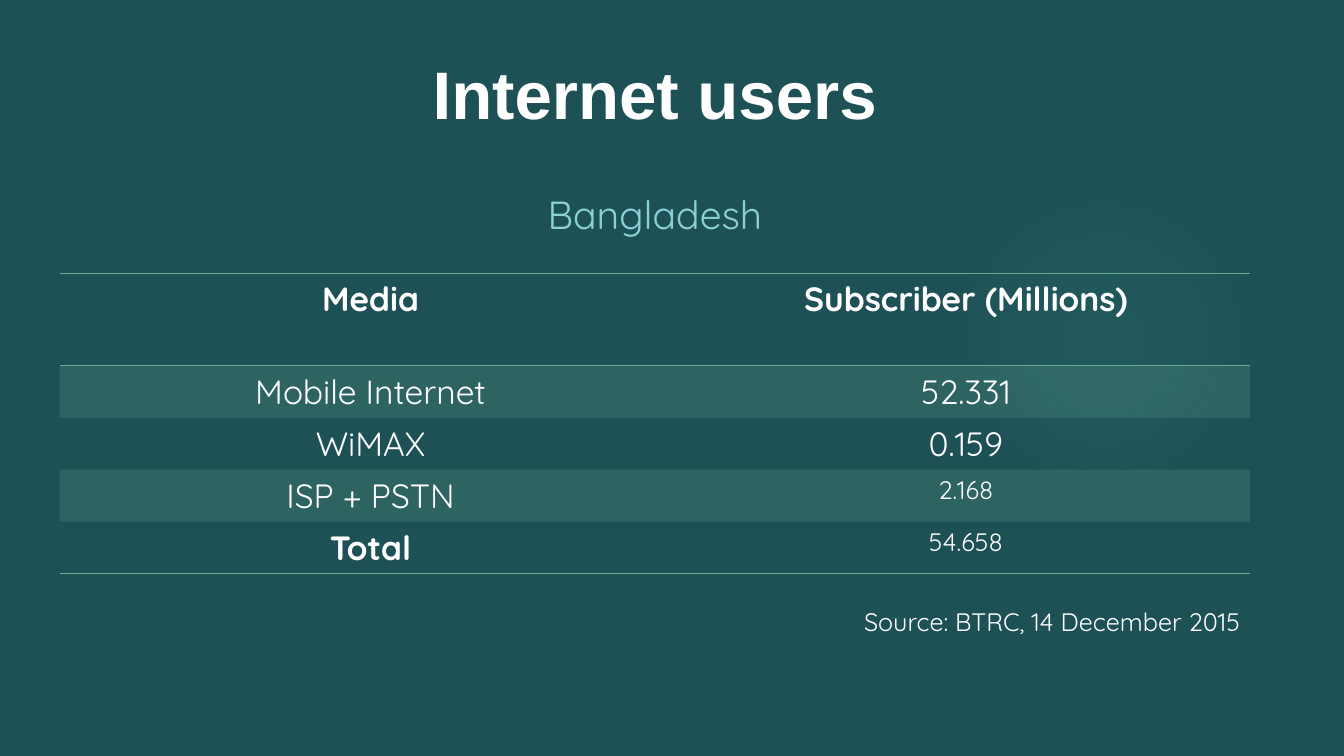
from lxml import etree
from pptx import Presentation
from pptx.dml.color import RGBColor
from pptx.enum.shapes import MSO_SHAPE
from pptx.enum.text import MSO_ANCHOR, PP_ALIGN
from pptx.oxml import parse_xml
from pptx.oxml.ns import nsdecls, qn
from pptx.util import Inches, Pt

CENTER, RIGHT = PP_ALIGN.CENTER, PP_ALIGN.RIGHT
TOP, MIDDLE = MSO_ANCHOR.TOP, MSO_ANCHOR.MIDDLE
OVAL = MSO_SHAPE.OVAL
DARK_TEAL = RGBColor(0x1E, 0x51, 0x55)
GLOW_TEAL = RGBColor(0x50, 0xB9, 0xC1)
PALE_TEAL = RGBColor(0x8A, 0xD0, 0xD6)
GREEN = RGBColor(0x6A, 0xAC, 0x90)
WHITE = RGBColor(0xFF, 0xFF, 0xFF)
NO_STYLE = "{2D5ABB26-0587-4C30-8999-92F81FD0307C}"


def write(frame, text, size, font="Quicksand", color=WHITE, bold=False, align=CENTER):
    frame.text = text
    paragraph = frame.paragraphs[0]
    paragraph.alignment = align
    style = paragraph.runs[0].font
    style.name, style.size, style.bold = font, Pt(size), bold
    style.color.rgb = color


prs = Presentation()
prs.slide_width, prs.slide_height = Inches(13.33), Inches(7.5)
slide = prs.slides.add_slide(prs.slide_layouts[6])
slide.background.fill.solid()
slide.background.fill.fore_color.rgb = DARK_TEAL

glow = slide.shapes.add_shape(OVAL, Inches(9.41), Inches(1.83), Inches(3.08), Inches(3.08))
glow.shadow.inherit = False
glow.line.fill.background()
glow.fill.gradient()
stops = "".join(
    f'<a:gs pos="{pos * 1000}"><a:srgbClr val="{GLOW_TEAL}">'
    f'<a:alpha val="{alpha * 1000}"/></a:srgbClr></a:gs>'
    for pos, alpha in [(0, 7), (36, 6), (69, 0)]
)
radial = parse_xml(
    f'<a:gradFill {nsdecls("a")} rotWithShape="1"><a:gsLst>{stops}</a:gsLst>'
    '<a:path path="circle"><a:fillToRect l="50000" t="50000" r="50000" b="50000"/>'
    "</a:path></a:gradFill>"
)
linear = glow._element.spPr.find(qn("a:gradFill"))
linear.getparent().replace(linear, radial)

captions = [
    (0.59, 0.43, 11.81, 0.98, MIDDLE, "Internet users", 48, "Arial", WHITE, True, CENTER),
    (0.59, 1.54, 11.81, 1.17, MIDDLE, "Bangladesh", 28, "Quicksand", PALE_TEAL, False, CENTER),
    (8.16, 5.97, 4.24, 0.4, TOP, "Source: BTRC, 14 December 2015", 18, "Quicksand", WHITE, False, RIGHT),
]
for left, top, width, height, anchor, *content in captions:
    caption = slide.shapes.add_textbox(Inches(left), Inches(top), Inches(width), Inches(height))
    caption.text_frame.word_wrap = True
    caption.text_frame.vertical_anchor = anchor
    write(caption.text_frame, *content)

subscribers = [
    ("Media", "Subscriber (Millions)"),
    ("Mobile Internet", "52.331"),
    ("WiMAX", "0.159"),
    ("ISP + PSTN", "2.168"),
    ("Total", "54.658"),
]
last = len(subscribers) - 1
table = slide.shapes.add_table(
    len(subscribers), 2, Inches(0.59), Inches(2.71), Inches(11.81), Inches(2.96)
).table
table.first_row = table.horz_banding = False
table._tbl.tblPr.find(qn("a:tableStyleId")).text = NO_STYLE
for column, width in zip(table.columns, (6.17, 5.64)):
    column.width = Inches(width)

for r, texts in enumerate(subscribers):
    table.rows[r].height = Inches(0.92 if r == 0 else 0.515)
    for c, text in enumerate(texts):
        cell = table.cell(r, c)
        size = 18 if c == 1 and r >= 3 else 24
        write(cell.text_frame, text, size, bold=r == 0 or text == "Total")
        if r % 2:
            cell.fill.solid()
            cell.fill.fore_color.rgb = GREEN
            tint = cell._tc.tcPr.find(".//" + qn("a:srgbClr"))
            etree.SubElement(tint, qn("a:alpha")).set("val", "20000")
        else:
            cell.fill.background()
        edges = {0: ("lnT", "lnB"), last: ("lnB",)}.get(r, ())
        for position, edge in enumerate(edges):
            border = parse_xml(
                f'<a:{edge} {nsdecls("a")} w="12700"><a:solidFill>'
                f'<a:srgbClr val="{GREEN}"/></a:solidFill></a:{edge}>'
            )
            cell._tc.tcPr.insert(position, border)

prs.save("out.pptx")
